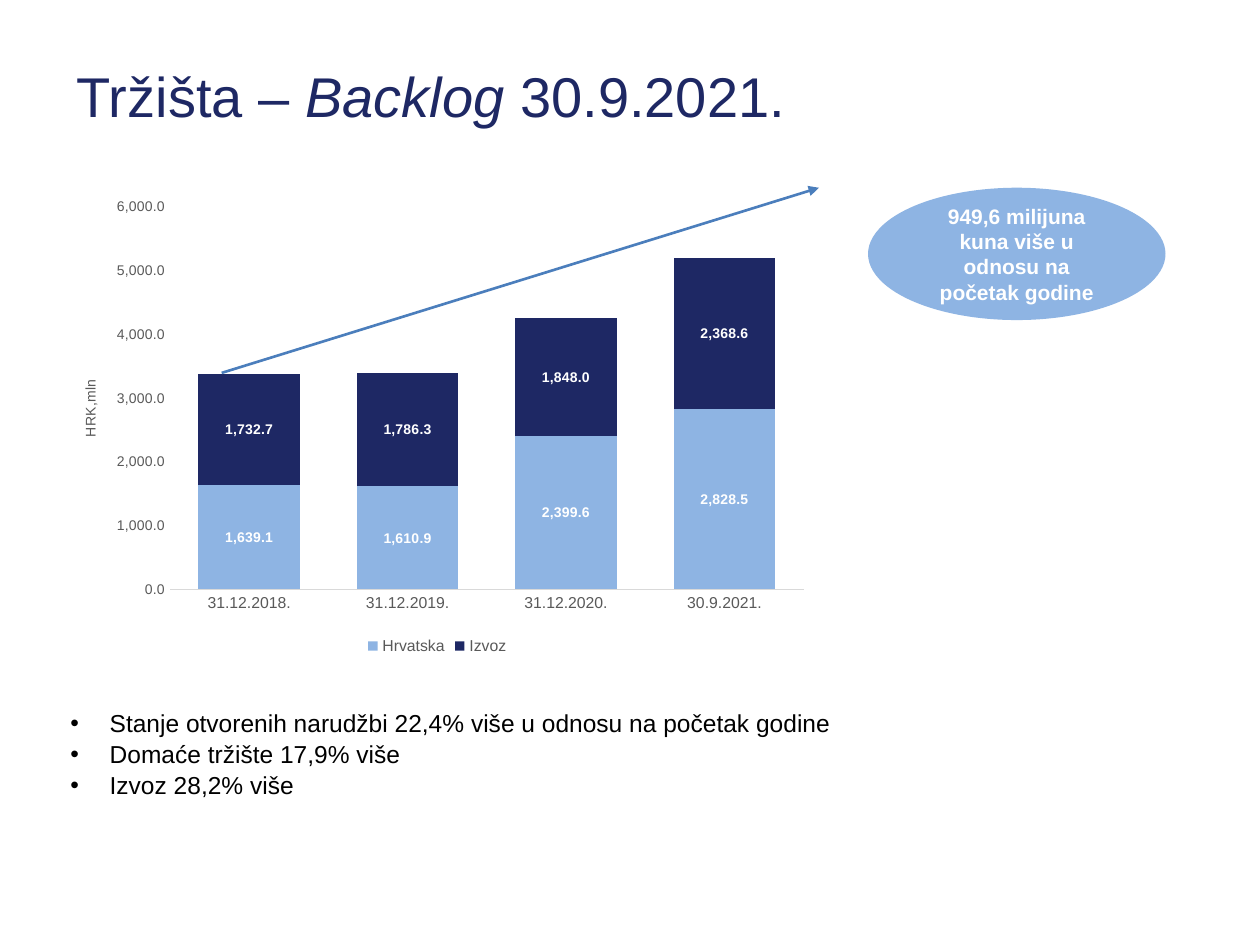
"""Build the order backlog slide with a stacked column chart."""
from dataclasses import dataclass

import lxml.etree
import pptx
import pptx.chart.data
import pptx.dml.color
import pptx.enum.chart
import pptx.enum.shapes
import pptx.enum.text
import pptx.oxml
import pptx.oxml.ns
import pptx.util

Pt = pptx.util.Pt
qn = pptx.oxml.ns.qn


@dataclass(frozen=True)
class Theme:
    face: str = "Arial"
    navy: str = "1E2864"
    sky: str = "8EB4E3"
    blue: str = "4B7EBC"
    gray: str = "595959"
    rule: str = "D9D9D9"
    white: str = "FFFFFF"
    black: str = "000000"
    head: int = 32
    body: int = 14
    note: int = 12
    label: int = 9
    small: int = 8


LOOK = Theme()
FORMAT = "#,##0.0"
DATES = ["31.12.2018.", "31.12.2019.", "31.12.2020.", "30.9.2021."]
SERIES = [
    ("Hrvatska", LOOK.sky, [1639.1, 1610.9, 2399.6, 2828.5]),
    ("Izvoz", LOOK.navy, [1732.7, 1786.3, 1848.0, 2368.6]),
]
POINTS = [
    "Stanje otvorenih narudžbi 22,4% više u odnosu na početak godine",
    "Domaće tržište 17,9% više",
    "Izvoz 28,2% više",
]


def rgb(code):
    return pptx.dml.color.RGBColor.from_string(code)


def style(font, size, color, bold=False):
    font.name = LOOK.face
    font.size = Pt(size)
    font.bold = bold
    font.color.rgb = rgb(color)


def paint(fill, color):
    fill.solid()
    fill.fore_color.rgb = rgb(color)


def add_title(slide, parts):
    title = slide.shapes.title
    title.left, title.top, title.width, title.height = Pt(36.7), Pt(31.7), Pt(669), Pt(45.4)
    frame = title.text_frame
    frame.auto_size = pptx.enum.text.MSO_AUTO_SIZE.NONE
    frame.vertical_anchor = pptx.enum.text.MSO_ANCHOR.MIDDLE
    para = frame.paragraphs[0]
    para.alignment = pptx.enum.text.PP_ALIGN.LEFT
    for text, slant in parts:
        run = para.add_run()
        run.text = text
        style(run.font, LOOK.head, LOOK.navy)
        run.font.italic = slant


def add_list(slide, lines):
    box = slide.shapes.add_textbox(Pt(33.1), Pt(400.3), Pt(458.6), Pt(58.3))
    frame = box.text_frame
    frame.word_wrap = False
    frame.text = "\n".join(lines)
    for para in frame.paragraphs:
        para.line_spacing = 1.05
        props = para._p.get_or_add_pPr()
        props.set("marL", str(Pt(22.5)))
        props.set("indent", str(Pt(-22.5)))
        lxml.etree.SubElement(props, qn("a:buFont")).set("typeface", LOOK.face)
        lxml.etree.SubElement(props, qn("a:buChar")).set("char", "•")
        style(para.runs[0].font, LOOK.body, LOOK.black)


def add_badge(slide, text):
    oval = slide.shapes.add_shape(
        pptx.enum.shapes.MSO_SHAPE.OVAL, Pt(496), Pt(107.3), Pt(170), Pt(75.6))
    oval.shadow.inherit = False
    paint(oval.fill, LOOK.sky)
    oval.line.fill.background()
    frame = oval.text_frame
    frame.word_wrap = True
    frame.vertical_anchor = pptx.enum.text.MSO_ANCHOR.MIDDLE
    frame.text = text
    para = frame.paragraphs[0]
    para.alignment = pptx.enum.text.PP_ALIGN.CENTER
    style(para.runs[0].font, LOOK.note, LOOK.white, True)


def place(node, index, **spots):
    for old in node.findall(qn("c:layout")):
        node.remove(old)
    layout = lxml.etree.Element(qn("c:layout"))
    manual = lxml.etree.SubElement(layout, qn("c:manualLayout"))
    for name, value in spots.items():
        lxml.etree.SubElement(manual, qn("c:" + name)).set("val", str(value))
    node.insert(index, layout)


def style_axes(chart):
    none = pptx.enum.chart.XL_TICK_MARK.NONE
    dates, money = chart.category_axis, chart.value_axis
    for axis, size in ((dates, LOOK.label), (money, LOOK.small)):
        axis.major_tick_mark = axis.minor_tick_mark = none
        axis.has_major_gridlines = False
        style(axis.tick_labels.font, size, LOOK.gray)
    paint(dates.format.line.fill, LOOK.rule)
    dates.format.line.width = Pt(0.75)
    money.format.line.fill.background()
    money.minimum_scale, money.maximum_scale, money.major_unit = 0, 6000, 1000
    money.tick_labels.number_format = FORMAT
    money.tick_labels.number_format_is_linked = False
    title = money.axis_title
    title.text_frame.text = "HRK,mln"
    style(title.text_frame.paragraphs[0].runs[0].font, LOOK.small, LOOK.gray)
    place(title._element, 1, xMode="edge", yMode="edge", x=0.03, y=0.4)


def style_bars(plot):
    plot.gap_width, plot.overlap = 56, 100
    plot.vary_by_categories = False
    for bar, (_, color, _) in zip(plot.series, SERIES):
        paint(bar.format.fill, color)
        labels = bar.data_labels
        labels.show_value = True
        labels.position = pptx.enum.chart.XL_LABEL_POSITION.CENTER
        labels.number_format = FORMAT
        labels.number_format_is_linked = False
        style(labels.font, LOOK.small, LOOK.white, True)


def add_chart(slide):
    data = pptx.chart.data.CategoryChartData(number_format=FORMAT)
    data.categories = DATES
    for name, _, values in SERIES:
        data.add_series(name, values)
    chart = slide.shapes.add_chart(
        pptx.enum.chart.XL_CHART_TYPE.COLUMN_STACKED,
        Pt(31.7), Pt(107.3), Pt(436.3), Pt(270), data).chart
    style(chart.font, 10, LOOK.black)
    chart.has_title = False
    chart.has_legend = True
    chart.legend.position = pptx.enum.chart.XL_LEGEND_POSITION.BOTTOM
    chart.legend.include_in_layout = False
    style(chart.legend.font, LOOK.label, LOOK.gray)
    style_axes(chart)
    style_bars(chart.plots[0])
    place(chart._chartSpace.chart.plotArea, 0, layoutTarget="inner",
          xMode="edge", yMode="edge", x=0.15, y=0.04, w=0.83, h=0.81)


def add_arrow(slide, start, end):
    line = slide.shapes.add_connector(
        pptx.enum.shapes.MSO_CONNECTOR.STRAIGHT, *map(Pt, start + end))
    line.line.color.rgb = rgb(LOOK.blue)
    line.line.width = Pt(1.5)
    stroke = line.line._get_or_add_ln()
    lxml.etree.SubElement(stroke, qn("a:tailEnd")).set("type", "triangle")
    lxml.etree.SubElement(line._element.spPr, qn("a:effectLst"))


def main():
    deck = pptx.Presentation()
    deck.slide_width, deck.slide_height = Pt(720), Pt(540)
    slide = deck.slides.add_slide(deck.slide_layouts[5])
    add_list(slide, POINTS)
    add_title(slide, [("Tržišta – ", False), ("Backlog", True), (" 30.9.2021.", False)])
    add_badge(slide, "949,6 milijuna kuna više u odnosu na početak godine")
    add_chart(slide)
    add_arrow(slide, (126.7, 213.1), (468, 107.3))
    deck.save("out.pptx")


if __name__ == "__main__":
    main()
